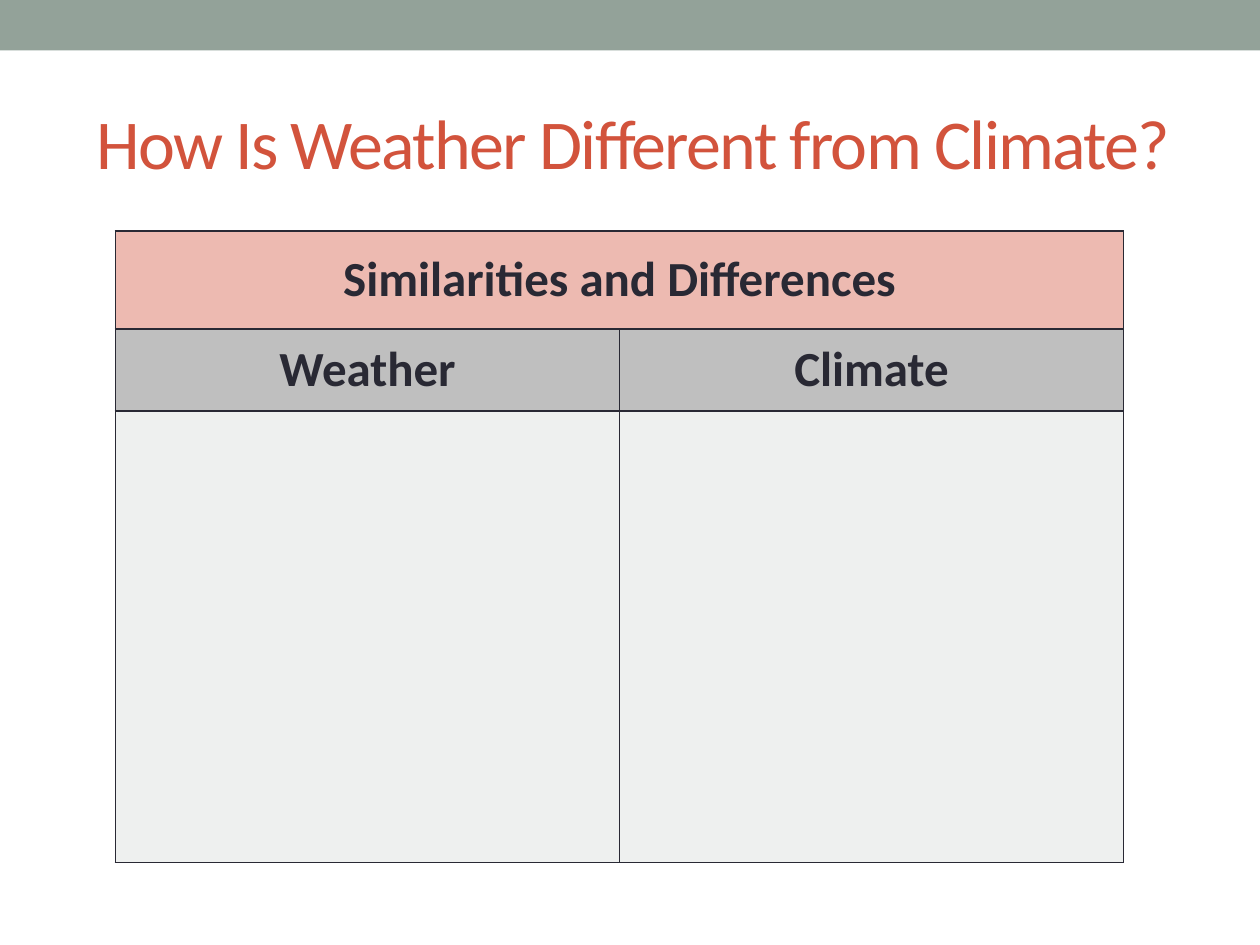
"""Build a slide with a chart for comparing weather and climate."""
from dataclasses import dataclass

import pptx
import pptx.dml.color
import pptx.enum.shapes
import pptx.enum.text
import pptx.oxml
import pptx.oxml.ns
import pptx.util

Pt = pptx.util.Pt


@dataclass(frozen=True)
class Theme:
    font: str = "Calibri"
    title_size: int = 40
    table_size: int = 28
    band: str = "93A299"
    title: str = "D2533C"
    ink: str = "292934"
    heading_fill: str = "EDBAB1"
    column_fill: str = "BFBFBF"
    answer_fill: str = "EEF0EF"


THEME = Theme()


def paint(fill, color):
    fill.solid()
    fill.fore_color.rgb = pptx.dml.color.RGBColor.from_string(color)


def write(frame, text, size, color, bold=False):
    frame.text = text
    for span in frame.paragraphs[0].runs:
        span.font.name = THEME.font
        span.font.size = Pt(size)
        span.font.bold = bold
        span.font.color.rgb = pptx.dml.color.RGBColor.from_string(color)


def add_band(slide, width, height):
    band = slide.shapes.add_shape(
        pptx.enum.shapes.MSO_SHAPE.RECTANGLE, 0, 0, width, height)
    band.shadow.inherit = False
    paint(band.fill, THEME.band)
    band.line.fill.background()


def add_title(slide, text):
    box = slide.shapes.add_textbox(Pt(48), Pt(42), Pt(636), Pt(78))
    frame = box.text_frame
    frame.word_wrap = True
    frame.vertical_anchor = pptx.enum.text.MSO_ANCHOR.MIDDLE
    write(frame, text, THEME.title_size, THEME.title)
    for span in frame.paragraphs[0].runs:
        span.font._element.set("spc", "-100")


def outline(cell):
    properties = cell._tc.get_or_add_tcPr()
    for position, side in enumerate(("lnL", "lnR", "lnT", "lnB")):
        border = pptx.oxml.parse_xml(
            f'<a:{side} {pptx.oxml.ns.nsdecls("a")} w="{Pt(1)}"><a:solidFill>'
            f'<a:srgbClr val="{THEME.ink}"/></a:solidFill></a:{side}>')
        properties.insert(position, border)


def style_cell(cell, text, color):
    cell.vertical_anchor = pptx.enum.text.MSO_ANCHOR.MIDDLE
    paint(cell.fill, color)
    outline(cell)
    write(cell.text_frame, text, THEME.table_size, THEME.ink, bold=True)
    cell.text_frame.paragraphs[0].alignment = pptx.enum.text.PP_ALIGN.CENTER


def add_comparison(slide, rows):
    width, height = 576, sum(row[0] for row in rows)
    table = slide.shapes.add_table(
        len(rows), 2, Pt(66), Pt(132), Pt(width), Pt(height)).table
    for index, (row_height, color, texts) in enumerate(rows):
        table.rows[index].height = Pt(row_height)
        for column, text in enumerate(texts):
            style_cell(table.cell(index, column), text, color)
    table.cell(0, 0).merge(table.cell(0, 1))


def main():
    deck = pptx.Presentation()
    deck.slide_width, deck.slide_height = Pt(720), Pt(540)
    slide = deck.slides.add_slide(deck.slide_layouts[6])
    add_band(slide, deck.slide_width, Pt(28.8))
    add_title(slide, "How Is Weather Different from Climate?")
    add_comparison(slide, [
        (56, THEME.heading_fill, ("Similarities and Differences", "")),
        (46.8, THEME.column_fill, ("Weather", "Climate")),
        (258, THEME.answer_fill, ("", "")),
    ])
    deck.save("out.pptx")


if __name__ == "__main__":
    main()
